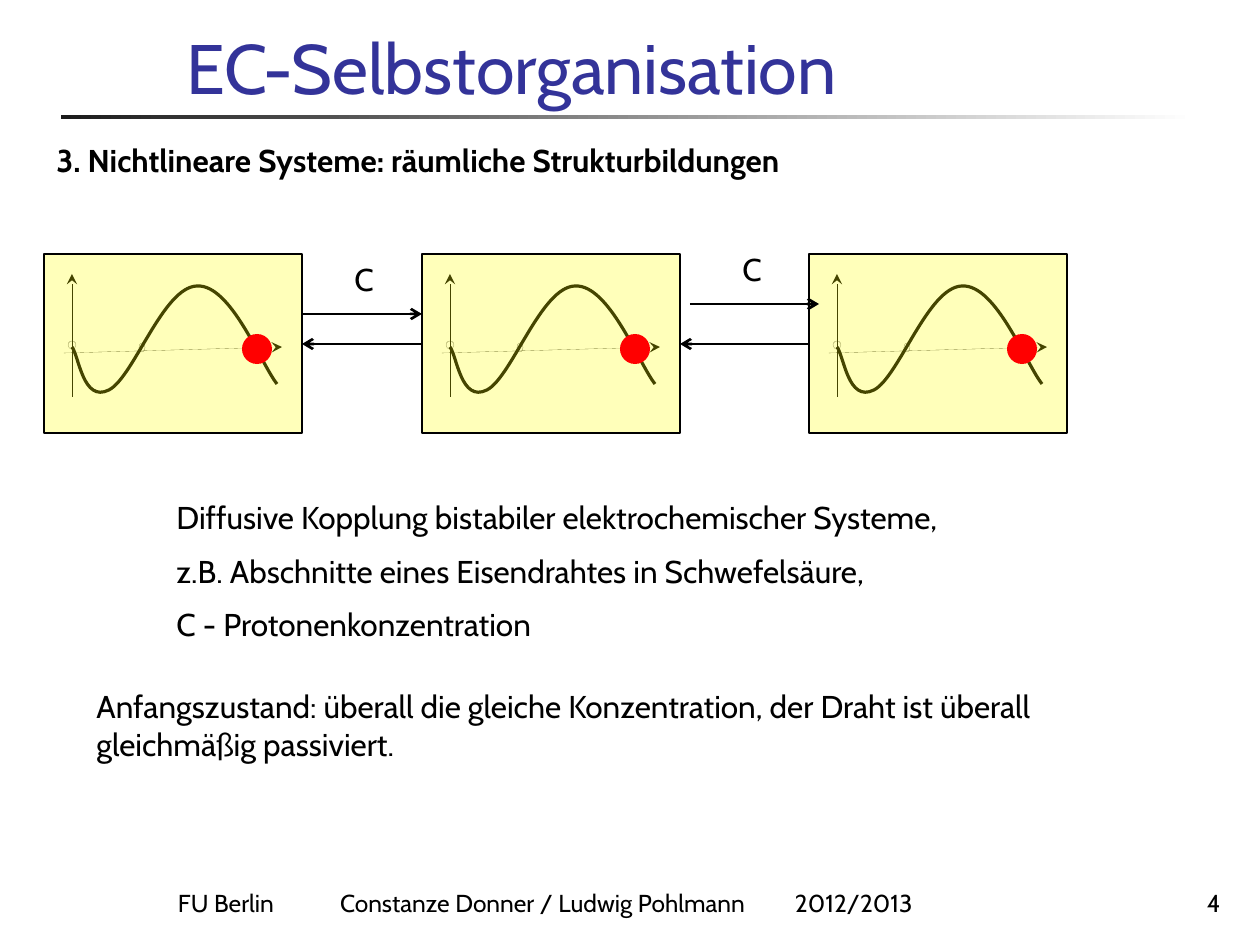
from lxml import etree
from pptx import Presentation, util as u
from pptx.dml.color import RGBColor
from pptx.enum import shapes, text
from pptx.oxml.ns import qn

SCALE = 914400 / 126
FONT = "Cabin"
BLACK = "000000"
HAIRLINE = 0.05


def px(length):
    """Turn pixels into EMU."""
    return u.Emu(round(length * SCALE))


def colour(value):
    """Turn a hex string into a colour."""
    return RGBColor.from_string(value)


def add_text(page, box, lines, size=18, tint=BLACK, bold=False,
             align=text.PP_ALIGN.LEFT, anchor=text.MSO_ANCHOR.TOP):
    """Place one paragraph per line in a text box and return its frame."""
    frame = page.shapes.add_textbox(*map(px, box)).text_frame
    frame.word_wrap = True
    frame.vertical_anchor = anchor
    for index, line in enumerate(lines):
        para = frame.add_paragraph() if index else frame.paragraphs[0]
        para.alignment = align
        if index:
            para.space_before = u.Pt(size / 2)
        span = para.add_run()
        span.text = line
        span.font.name = FONT
        span.font.size = u.Pt(size)
        span.font.bold = bold
        span.font.color.rgb = colour(tint)
    return frame


def add_line(parent, start, end, width, head):
    """Draw a straight arrow between two points."""
    line = parent.shapes.add_connector(
        shapes.MSO_CONNECTOR.STRAIGHT, *map(px, (*start, *end)))
    line.line.color.rgb = colour(BLACK)
    line.line.width = u.Pt(width)
    etree.SubElement(line.line._get_or_add_ln(), qn("a:tailEnd"), type=head)
    etree.SubElement(line._element.spPr, qn("a:effectLst"))


def style_shape(shape, fill=None, width=None):
    """Set fill and outline of a shape without shadow."""
    shape.shadow.inherit = False
    if fill:
        shape.fill.solid()
        shape.fill.fore_color.rgb = colour(fill)
    else:
        shape.fill.background()
    if width:
        shape.line.color.rgb = colour(BLACK)
        shape.line.width = u.Pt(width)
    else:
        shape.line.fill.background()


def add_preset(parent, kind, box, fill=None, width=None):
    """Place a styled preset shape."""
    shape = parent.shapes.add_shape(kind, *map(px, box))
    style_shape(shape, fill, width)
    return shape


def bend(shape):
    """Turn each three straight segments of an outline into one cubic curve."""
    outline = next(shape._element.iter(qn("a:path")))
    segments = outline.findall(qn("a:lnTo"))
    for first in range(0, len(segments), 3):
        cubic = etree.SubElement(outline, qn("a:cubicBezTo"))
        for segment in segments[first:first + 3]:
            cubic.append(segment[0])
            outline.remove(segment)


def add_curve(parent, left, top):
    """Draw the bistable characteristic curve."""
    knots = [(28, 93), (35, 102), (39, 149), (65, 136), (90, 123),
             (119, 33), (153, 32), (187, 30), (217, 110), (233, 130)]
    knots = [(px(left + x), px(top + y)) for x, y in knots]
    builder = parent.shapes.build_freeform(*knots[0])
    builder.add_line_segments(knots[1:], close=False)
    curve = builder.convert_to_shape()
    bend(curve)
    style_shape(curve, width=1.8)


def add_cell(page, box):
    """Place one electrochemical cell with axes, curve and state dot."""
    left, top, _, _ = box
    oval = shapes.MSO_SHAPE.OVAL
    group = page.shapes.add_group_shape()
    for start, end in (((20, 99), (238, 93)), ((28, 143), (28, 20))):
        add_line(group, (left + start[0], top + start[1]),
                 (left + end[0], top + end[1]), HAIRLINE, "stealth")
    for x, y, width, height in ((95, 89, 6, 9), (207, 90, 8, 8)):
        add_preset(group, oval, (left + x, top + y, width, height), width=HAIRLINE)
    add_curve(group, left, top)
    add_preset(group, oval, (left + 24, top + 87, 8, 8), width=HAIRLINE)
    cover = add_preset(group, shapes.MSO_SHAPE.RECTANGLE, box, "FFFF00", 1)
    tint = cover.fill._xPr.find(qn("a:solidFill"))[0]
    etree.SubElement(tint, qn("a:alpha"), val="27000")


def add_coupling(page, box, shift, lift):
    """Place the exchange arrows and label between two cells."""
    left, top, width, _ = box
    right = left + width
    add_line(page, (left + shift, top + 60 - lift),
             (right + shift, top + 60 - lift), 1.5, "arrow")
    add_line(page, (right, top + 90), (left, top + 90), 1.5, "arrow")
    add_text(page, (left + 40 + shift, top - lift, 44, 50), ["C"])


def add_diagram(page, box):
    """Place three diffusively coupled cells with their state dots."""
    left, top, width, height = box
    cell_width = 258
    lefts = [left, left + 378, left + width - cell_width]
    for cell_left in lefts:
        add_cell(page, (cell_left, top, cell_width, height))
    for start, end, offset in zip(lefts, lefts[1:], (0, 10)):
        gap_left = start + cell_width
        add_coupling(page, (gap_left, top, end - gap_left, height), offset, offset)
    for cell_left in lefts:
        add_preset(page, shapes.MSO_SHAPE.OVAL,
                   (cell_left + 198, top + 80, 30, 30), "FF0000")


def add_header(page, box):
    """Place the title, the fading rule and the section heading."""
    left, top, width, height = box
    rule = add_preset(page, shapes.MSO_SHAPE.RECTANGLE,
                      (left + 17, top + 86, 1134, 4), BLACK)
    rule.fill.gradient()
    rule.fill.gradient_angle = 0
    for stop, tint in zip(rule.fill.gradient_stops, ("1C1C1C", "FFFFFF")):
        stop.color.rgb = colour(tint)
    add_text(page, (left + 130, top, width - 130, 86), ["EC-Selbstorganisation"],
             40, "333399", anchor=text.MSO_ANCHOR.BOTTOM)
    add_text(page, (left, top + height - 50, 887, 50),
             ["3. Nichtlineare Systeme: räumliche Strukturbildungen"], bold=True)


def add_body(page, box):
    """Place the explanation and the initial state."""
    left, top, width, height = box
    add_text(page, (left + 80, top, 825, 165),
             ["Diffusive Kopplung bistabiler elektrochemischer Systeme,",
              "z.B. Abschnitte eines Eisendrahtes in Schwefelsäure,",
              "C - Protonenkonzentration"])
    add_text(page, (left, top + height - 89, width, 89),
             ["Anfangszustand: überall die gleiche Konzentration, "
              "der Draht ist überall gleichmäßig passiviert."])


def add_footer(page, box):
    """Place the tabbed credits and the page number."""
    left, top, width, height = box
    bottom = text.MSO_ANCHOR.BOTTOM
    credits = add_text(page, (left, top, 1002, height),
                       ["FU Berlin\tConstanze Donner / Ludwig Pohlmann\t2012/2013"],
                       14, anchor=bottom)
    credits.margin_left = px(134)
    tabs = etree.SubElement(credits.paragraphs[0]._p.get_or_add_pPr(), qn("a:tabLst"))
    for stop in (162, 617):
        etree.SubElement(tabs, qn("a:tab"), pos=str(px(stop)), algn="l")
    add_text(page, (left + width - 166, top, 166, height), ["4"], 14,
             align=text.PP_ALIGN.RIGHT, anchor=bottom)


def main():
    """Build and save the slide."""
    deck = Presentation()
    deck.slide_width, deck.slide_height = px(1260), px(945)
    page = deck.slides.add_slide(deck.slide_layouts[6])
    add_header(page, (44, 29, 1188, 156))
    add_diagram(page, (44, 254, 1023, 179))
    add_body(page, (84, 492, 1002, 278))
    add_footer(page, (44, 861, 1189, 63))
    deck.save("out.pptx")


if __name__ == "__main__":
    main()
